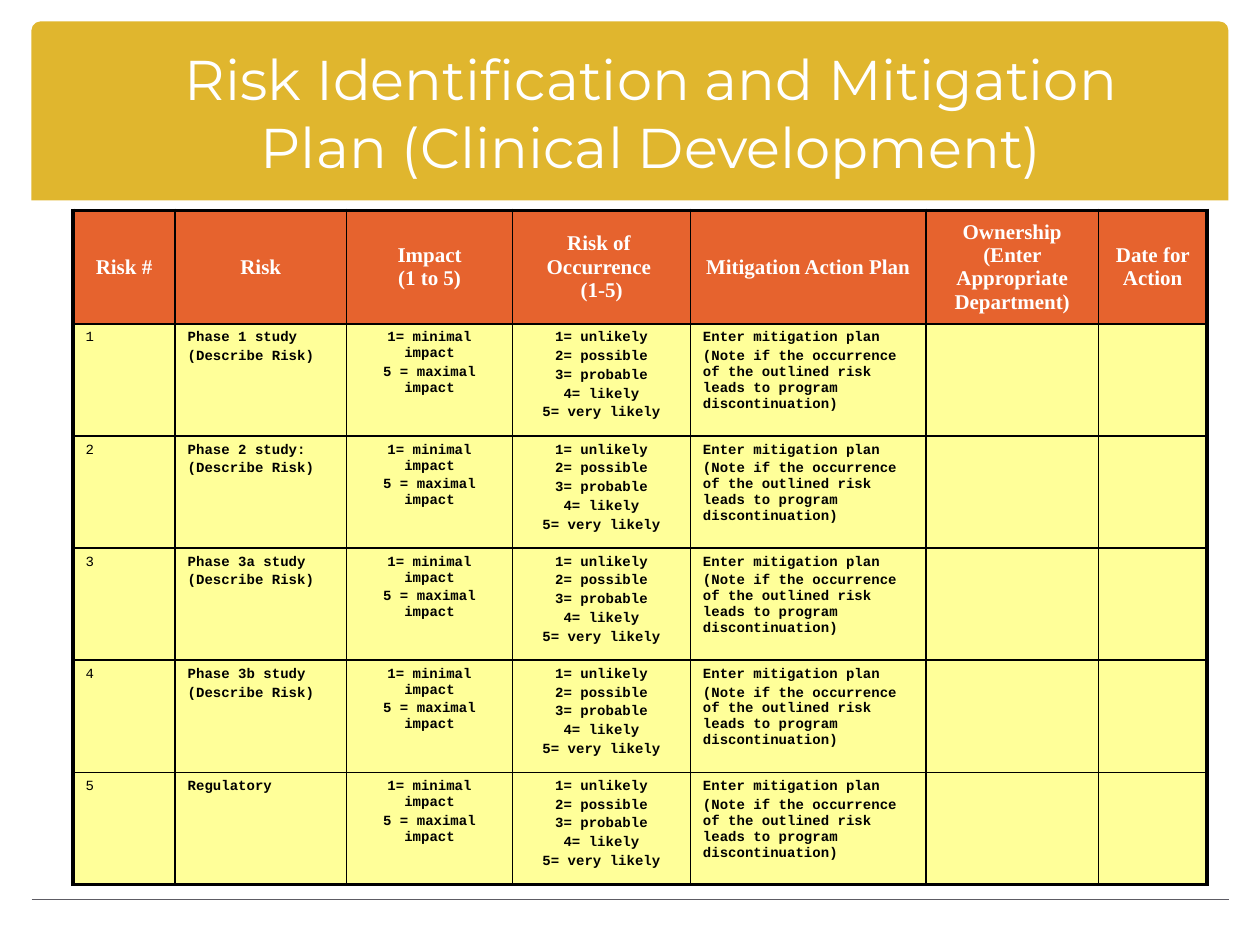
from copy import deepcopy

from lxml import etree
from pptx import Presentation
from pptx.dml.color import RGBColor
from pptx.enum import shapes, text
from pptx.oxml.ns import qn
from pptx.util import Inches, Pt

GOLD, ORANGE, YELLOW = "E0B62E", "E6632E", "FFFF99"
GREY, BLACK, WHITE = "5D5C64", "000000", "FFFFFF"
LEFT, CENTER = text.PP_ALIGN.LEFT, text.PP_ALIGN.CENTER

TITLE_FORMAT = {"name": "Montserrat", "size": Pt(32)}
HEADER_FORMAT = {"name": "Times New Roman", "size": Pt(12), "bold": True}
BODY_FORMAT = {"name": "Courier New", "size": Pt(8), "bold": True}
NUMBER_FORMAT = {**BODY_FORMAT, "bold": False}

COLUMN_WIDTHS = [0.81, 1.36, 1.32, 1.41, 1.87, 1.37, 0.86]
ROW_HEIGHTS = [0.88] + [0.89] * 5
HEADERS = [
    "Risk #", "Risk", "Impact\v(1 to 5)", "Risk of \vOccurrence \v(1-5)",
    "Mitigation Action Plan", "Ownership (Enter Appropriate Department)",
    "Date for Action",
]
DESCRIBE = "(Describe Risk)"
RISKS = [
    ["Phase 1 study", DESCRIBE],
    ["Phase 2 study:", DESCRIBE],
    ["Phase 3a study", DESCRIBE],
    ["Phase 3b study", DESCRIBE],
    ["Regulatory"],
]
IMPACT = ["1= minimal impact", "5 = maximal impact"]
OCCURRENCE = ["1= unlikely", "2= possible", "3= probable", "4= likely",
              "5= very likely"]
MITIGATION = [
    "Enter mitigation plan",
    "(Note if the occurrence of the outlined risk leads to program "
    "discontinuation)",
]


def rgb(color):
    return RGBColor.from_string(color)


def write(frame, lines, font_format, color, align):
    """Fill a text frame with one paragraph per line."""
    frame.text = "\n".join(lines)
    for index, paragraph in enumerate(frame.paragraphs):
        paragraph.alignment = align
        paragraph.space_before = Pt(1.6 if index else 0)
        for run in paragraph.runs:
            for name, value in font_format.items():
                setattr(run.font, name, value)
            run.font.color.rgb = rgb(color)
        # Line breaks take the same format as the text around them
        for line_break in paragraph._p.findall(qn("a:br")):
            line_break.append(deepcopy(paragraph.runs[0]._r.rPr))


def set_borders(cell, widths):
    properties = cell._tc.get_or_add_tcPr()
    for side, width in widths.items():
        edge = etree.SubElement(properties, qn(f"a:ln{side}"), w=str(Pt(width)))
        fill = etree.SubElement(edge, qn("a:solidFill"))
        etree.SubElement(fill, qn("a:srgbClr"), val=BLACK)


def add_banner(slide):
    banner = slide.shapes.add_shape(
        shapes.MSO_SHAPE.ROUND_2_SAME_RECTANGLE,
        Inches(0.25), Inches(0.17), Inches(9.5), Inches(1.42))
    banner.adjustments[0] = 0.05
    banner.shadow.inherit = False
    banner.fill.solid()
    banner.fill.fore_color.rgb = rgb(GOLD)
    banner.line.fill.background()


def add_footer_rule(slide):
    rule = slide.shapes.add_connector(
        shapes.MSO_CONNECTOR.STRAIGHT,
        Inches(0.25), Inches(7.14), Inches(9.75), Inches(7.14))
    rule.line.color.rgb = rgb(GREY)
    rule.line.width = Pt(1)
    etree.SubElement(rule._element.spPr, qn("a:effectLst"))


def add_title(slide, title):
    frame = slide.shapes.add_textbox(
        Inches(0.92), Inches(0.5), Inches(8.5), Inches(0.78)).text_frame
    frame.word_wrap = True
    frame.vertical_anchor = text.MSO_ANCHOR.MIDDLE
    write(frame, [title], TITLE_FORMAT, WHITE, CENTER)


def add_risk_table(slide):
    row_count, column_count = len(ROW_HEIGHTS), len(COLUMN_WIDTHS)
    table = slide.shapes.add_table(
        row_count, column_count, Inches(0.58), Inches(1.67),
        Inches(sum(COLUMN_WIDTHS)), Inches(sum(ROW_HEIGHTS))).table
    table.first_row = table.horz_banding = False
    for column, width in zip(table.columns, COLUMN_WIDTHS):
        column.width = Inches(width)
    for row, height in zip(table.rows, ROW_HEIGHTS):
        row.height = Inches(height)

    # Thick outer frame, thin inner grid, one fill per band
    for r in range(row_count):
        for c in range(column_count):
            outer = {"L": c == 0, "R": c == column_count - 1,
                     "T": r == 0, "B": r == row_count - 1}
            cell = table.cell(r, c)
            set_borders(cell, {side: 2.25 if is_outer else 1
                               for side, is_outer in outer.items()})
            cell.fill.solid()
            cell.fill.fore_color.rgb = rgb(YELLOW if r else ORANGE)

    # Header row
    for c, header in enumerate(HEADERS):
        cell = table.cell(0, c)
        cell.vertical_anchor = text.MSO_ANCHOR.MIDDLE
        write(cell.text_frame, [header], HEADER_FORMAT, WHITE, CENTER)

    # Risk rows; ownership and date stay open
    for r, risk in enumerate(RISKS, start=1):
        entries = [
            ([str(r)], NUMBER_FORMAT, LEFT),
            (risk, BODY_FORMAT, LEFT),
            (IMPACT, BODY_FORMAT, CENTER),
            (OCCURRENCE, BODY_FORMAT, CENTER),
            (MITIGATION, BODY_FORMAT, LEFT),
        ]
        for c, (lines, font_format, align) in enumerate(entries):
            write(table.cell(r, c).text_frame, lines, font_format, BLACK, align)


def main():
    deck = Presentation()
    deck.slide_width, deck.slide_height = Inches(10), Inches(7.5)
    slide = deck.slides.add_slide(deck.slide_layouts[6])
    add_banner(slide)
    add_footer_rule(slide)
    add_title(slide, "Risk Identification and Mitigation Plan "
                     "(Clinical Development)")
    add_risk_table(slide)
    deck.save("out.pptx")


if __name__ == "__main__":
    main()
